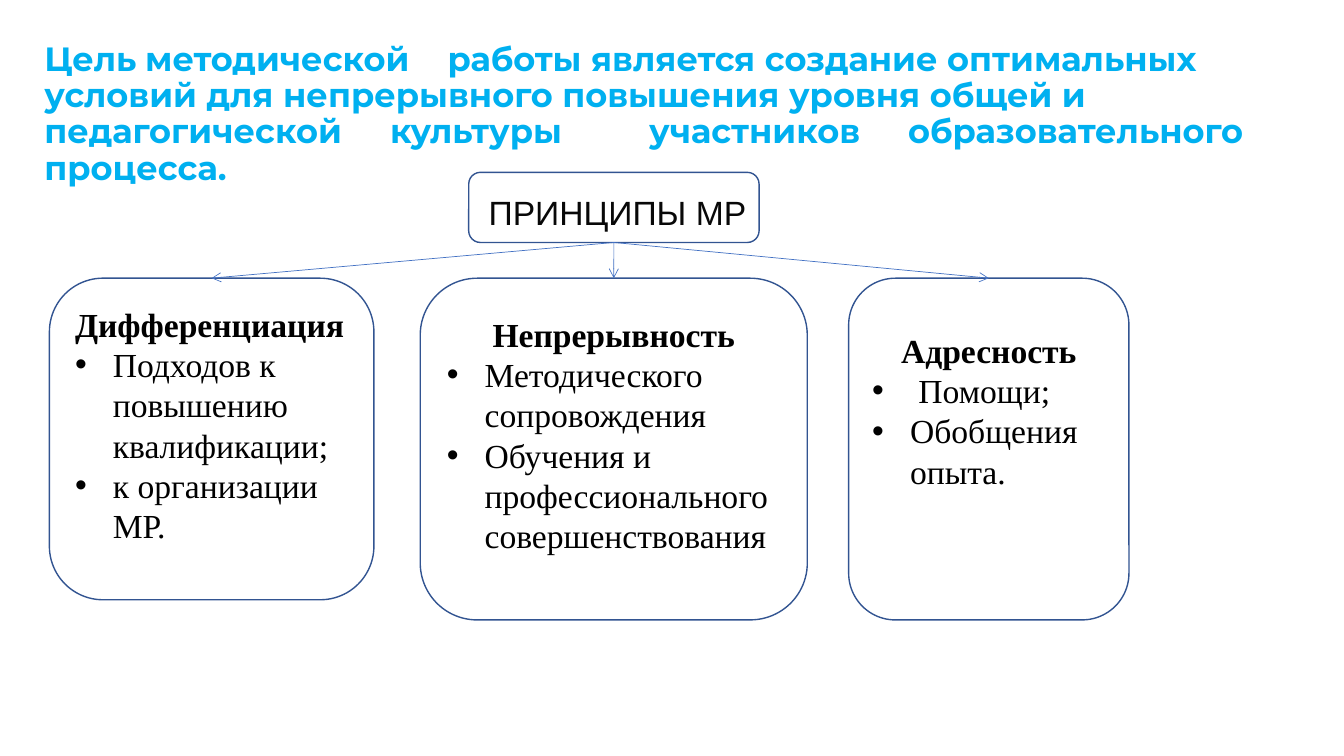
"""Build a slide on the aim and principles of methodical work."""
import pptx
import pptx.util
import pptx.dml.color
import pptx.enum.shapes
import pptx.enum.text
import pptx.oxml.ns
from lxml import etree

Pt = pptx.util.Pt
ALIGN = pptx.enum.text.PP_ALIGN
ANCHOR = pptx.enum.text.MSO_ANCHOR
COLORS = {"title": "00B0F0", "label": "080808", "text": "000000",
          "fill": "FFFFFF", "outline": "325491", "arrow": "4472C4"}

TITLE = ("Цель\tметодической\tработы является создание оптимальных условий "
         "для непрерывного повышения уровня общей и "
         "педагогической\tкультуры\tучастников\tобразовательного процесса.")
TITLE_TABS = (72, 247, 288, 432, 617)
PANEL_TOP = 198.7
PANELS = [
    (35.3, 231.8, 229.7, 24.3, ALIGN.LEFT, "Дифференциация",
     ["Подходов к повышению квалификации;", "к организации МР."]),
    (300.2, 276.5, 244.1, 24.3, ALIGN.CENTER, "Непрерывность",
     ["Методического сопровождения",
      "Обучения и профессионального совершенствования"]),
    (606.2, 200.2, 244.1, 58.8, ALIGN.CENTER, "Адресность",
     [" Помощи;", "Обобщения опыта."]),
]


def rgb(name):
    return pptx.dml.color.RGBColor.from_string(COLORS[name])


def add_element(parent, tag, **attrs):
    el = etree.SubElement(parent, pptx.oxml.ns.qn(tag))
    for key, value in attrs.items():
        el.set(key, str(value))
    return el


def set_font(p, name, color, bold=False):
    p.font.name = name
    p.font.size = Pt(24)
    p.font.bold = bold
    p.font.color.rgb = rgb(color)


def fill_placeholder(sp, box, text, anchor, align):
    sp.left, sp.top, sp.width, sp.height = (Pt(v) for v in box)
    tf = sp.text_frame
    tf.text = text
    tf.word_wrap = True
    tf.auto_size = pptx.enum.text.MSO_AUTO_SIZE.NONE
    tf.vertical_anchor = anchor
    p = tf.paragraphs[0]
    p.alignment = align
    p.line_spacing = 0.9
    p.space_before = Pt(0)
    return p


def add_title(s):
    p = fill_placeholder(s.shapes.title, (24.5, 8.6, 893.5, 128.9), TITLE,
                         ANCHOR.BOTTOM, ALIGN.LEFT)
    tabs = add_element(p._p.get_or_add_pPr(), "a:tabLst")
    for pos in TITLE_TABS:
        add_element(tabs, "a:tab", pos=int(Pt(pos)), algn="l")
    set_font(p, "Montserrat", "title", bold=True)


def add_label(s):
    sp = s.placeholders[1]
    p = fill_placeholder(sp, (46.1, 136.8, 736.6, 118.1), "ПРИНЦИПЫ МР",
                         ANCHOR.TOP, ALIGN.CENTER)
    sp.text_frame.margin_left = Pt(60.6)
    pPr = p._p.get_or_add_pPr()
    pPr.set("marL", "0")
    pPr.set("indent", "0")
    add_element(pPr, "a:buNone")
    set_font(p, "Arial", "label")


def add_box(s, left, top, width, height):
    sp = s.shapes.add_shape(pptx.enum.shapes.MSO_SHAPE.ROUNDED_RECTANGLE,
                            Pt(left), Pt(top), Pt(width), Pt(height))
    sp.shadow.inherit = False
    sp.fill.background()
    sp.line.color.rgb = rgb("outline")
    sp.line.width = Pt(1)
    return sp


def add_root(s):
    sp = add_box(s, 334.8, 123.1, 207.4, 50.1)
    sp.fill.solid()
    sp.fill.fore_color.rgb = rgb("fill")
    s.shapes._spTree.insert(2, sp._element)
    return sp


def add_panel(s, left, width, height, bottom_inset, align, heading, items):
    sp = add_box(s, left, PANEL_TOP, width, height)
    tf = sp.text_frame
    tf.word_wrap = True
    tf.vertical_anchor = ANCHOR.MIDDLE
    tf.margin_bottom = Pt(bottom_inset)
    p = tf.paragraphs[0]
    p.text = heading
    p.alignment = align
    set_font(p, "Times New Roman", "text", bold=True)
    for item in items:
        p = tf.add_paragraph()
        p.text = item
        p.alignment = ALIGN.LEFT
        pPr = p._p.get_or_add_pPr()
        pPr.set("marL", str(int(Pt(27))))
        pPr.set("indent", str(-int(Pt(27))))
        add_element(pPr, "a:buFont", typeface="Arial")
        add_element(pPr, "a:buChar", char="•")
        set_font(p, "Times New Roman", "text")
    return sp


def add_arrow(s, root, panel):
    cxn = s.shapes.add_connector(pptx.enum.shapes.MSO_CONNECTOR.STRAIGHT,
                                 0, 0, 0, 0)
    cxn.begin_connect(root, 2)
    cxn.end_connect(panel, 0)
    cxn.line.color.rgb = rgb("arrow")
    cxn.line.width = Pt(0.5)
    add_element(cxn.line._get_or_add_ln(), "a:tailEnd", type="arrow")
    add_element(cxn._element.spPr, "a:effectLst")


def main():
    prs = pptx.Presentation()
    prs.slide_width, prs.slide_height = Pt(960), Pt(540)
    s = prs.slides.add_slide(prs.slide_layouts[1])
    add_title(s)
    add_label(s)
    root = add_root(s)
    panels = [add_panel(s, *panel) for panel in PANELS]
    for panel in panels:
        add_arrow(s, root, panel)
    prs.save("out.pptx")


if __name__ == "__main__":
    main()
